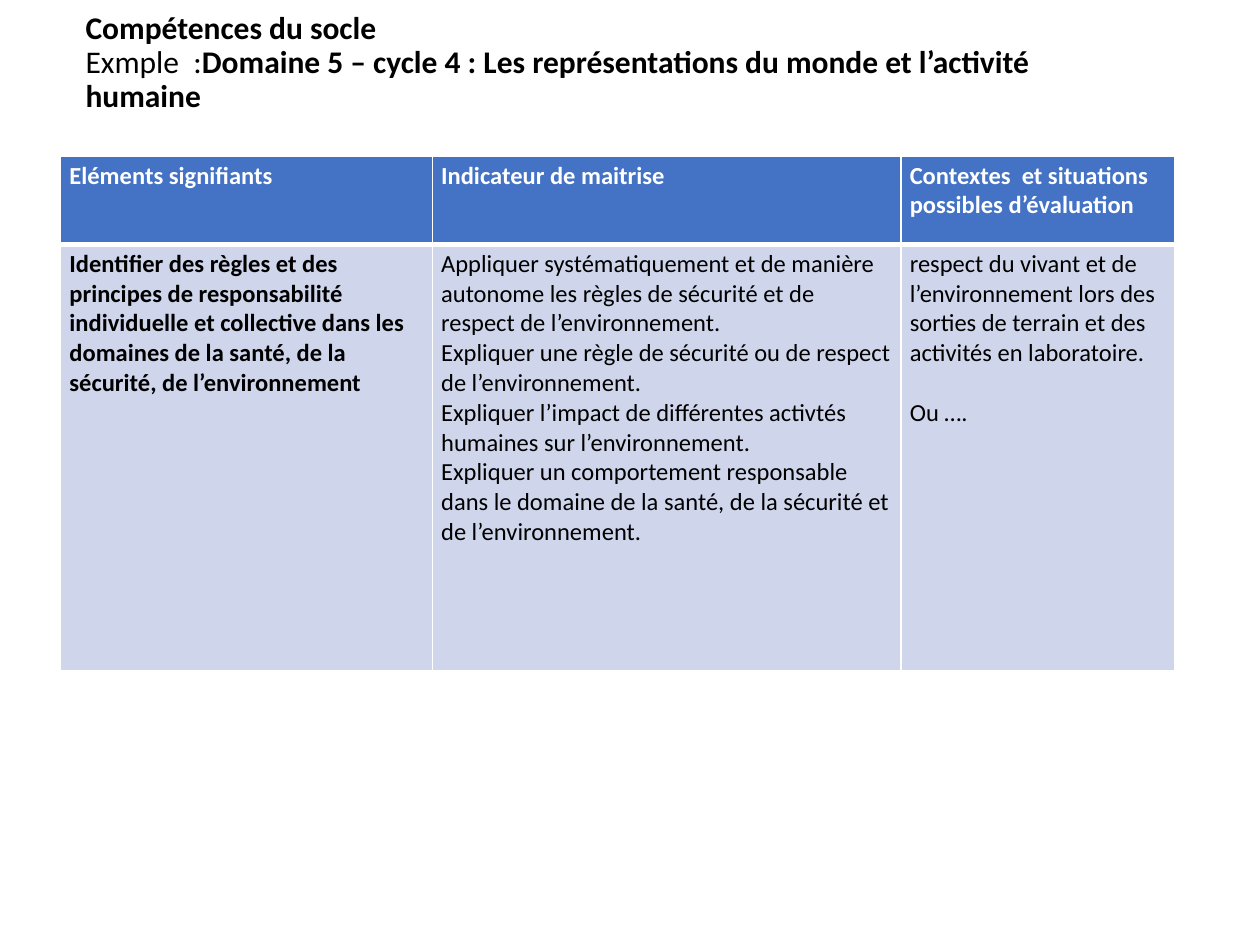
from lxml.etree import SubElement
from pptx import Presentation
from pptx.dml.color import RGBColor
from pptx.enum.text import MSO_ANCHOR
from pptx.oxml.ns import qn
from pptx.util import Pt

COLORS = {"ink": "000000", "white": "FFFFFF", "header": "4472C4", "body": "CFD5EA"}

TITLE_SPANS = [
    ("Compétences du socle\v", True),
    ("Exmple  :", False),
    ("Domaine 5 – cycle 4 : Les représentations du monde et l’activité humaine", True),
]
HEADINGS = [
    "Eléments signifiants",
    "Indicateur de maitrise",
    "Contextes  et situations possibles d’évaluation",
]
ELEMENTS = [
    "Identifier des règles et des principes de responsabilité individuelle et "
    "collective dans les domaines de la santé, de la sécurité, de l’environnement",
]
INDICATORS = [
    "Appliquer systématiquement et de manière autonome les règles de sécurité "
    "et de respect de l’environnement.",
    "Expliquer une règle de sécurité ou de respect de l’environnement.",
    "Expliquer l’impact de différentes activtés humaines sur l’environnement.",
    "Expliquer un comportement responsable dans le domaine de la santé, "
    "de la sécurité et de l’environnement.",
]
CONTEXTS = [
    "respect du vivant et de l’environnement lors des sorties de terrain "
    "et des activités en laboratoire.",
    "Ou ….",
]

HEADER_STYLE = {"size": Pt(14), "bold": True, "color": "white"}
STRONG_STYLE = {"size": Pt(14), "bold": True, "color": "ink"}
PLAIN_STYLE = {"size": Pt(14), "bold": False, "color": "ink"}
CELL_FORMAT = {
    "margin_left": Pt(5.1), "margin_right": Pt(5.1),
    "margin_top": Pt(2.6), "margin_bottom": Pt(2.6),
    "vertical_anchor": MSO_ANCHOR.TOP,
}
COLUMN_WIDTHS = [212.4, 267.8, 156.3]
ROW_HEIGHTS = [50.4, 243.4]


def set_format(target, values):
    for name, value in values.items():
        setattr(target, name, value)


def add_span(para, text, style):
    """Add text to a paragraph; a vertical tab becomes a line break."""
    span = para.add_run()
    span.text = text.rstrip("\v")
    if text.endswith("\v"):
        para.add_line_break()
    set_format(span.font, {"name": "Calibri", "size": style["size"], "bold": style["bold"]})
    span.font.color.rgb = RGBColor.from_string(COLORS[style["color"]])


def set_borders(cell, widths):
    properties = cell._tc.get_or_add_tcPr()
    for position, (side, width) in enumerate(widths.items()):
        line = properties.makeelement(qn(f"a:{side}"), {"w": str(Pt(width))})
        fill = SubElement(line, qn("a:solidFill"))
        SubElement(fill, qn("a:srgbClr"), val=COLORS["white"])
        properties.insert(position, line)


def add_title(page, left, top, width, height):
    box = page.shapes.add_textbox(Pt(left), Pt(top), Pt(width), Pt(height))
    # The deeper bottom margin lifts the centred lines above the table
    set_format(box.text_frame, {
        "word_wrap": True, "vertical_anchor": MSO_ANCHOR.MIDDLE,
        "margin_top": Pt(3.6), "margin_bottom": Pt(23),
    })
    para = box.text_frame.paragraphs[0]
    para.line_spacing = 0.9
    for text, bold in TITLE_SPANS:
        add_span(para, text, {"size": Pt(18), "bold": bold, "color": "ink"})


def fill_cell(cell, texts, style, fill, borders, gap=0):
    set_format(cell, CELL_FORMAT)
    cell.fill.solid()
    cell.fill.fore_color.rgb = RGBColor.from_string(COLORS[fill])
    set_borders(cell, borders)
    for index, text in enumerate(texts):
        para = cell.text_frame.add_paragraph() if index else cell.text_frame.paragraphs[0]
        if index and gap:
            para.space_before = Pt(gap)
        add_span(para, text, style)


def add_skills_table(page, left, top):
    table = page.shapes.add_table(
        len(ROW_HEIGHTS), len(COLUMN_WIDTHS), Pt(left), Pt(top),
        Pt(sum(COLUMN_WIDTHS)), Pt(sum(ROW_HEIGHTS))).table
    for column, width in zip(table.columns, COLUMN_WIDTHS):
        column.width = Pt(width)
    for row, height in zip(table.rows, ROW_HEIGHTS):
        row.height = Pt(height)

    # Header row, with a thick rule beneath
    for index, heading in enumerate(HEADINGS):
        fill_cell(table.cell(0, index), [heading], HEADER_STYLE, "header",
                  {"lnL": 1, "lnR": 1, "lnT": 1, "lnB": 3})

    # Body row: one list of paragraphs per column
    body = [(ELEMENTS, STRONG_STYLE, 0), (INDICATORS, PLAIN_STYLE, 0),
            (CONTEXTS, PLAIN_STYLE, 17)]
    for index, (texts, style, gap) in enumerate(body):
        fill_cell(table.cell(1, index), texts, style, "body",
                  {"lnL": 1, "lnR": 1, "lnT": 3, "lnB": 1}, gap)


def main():
    deck = Presentation()
    set_format(deck, {"slide_width": Pt(720), "slide_height": Pt(540)})
    page = deck.slides.add_slide(deck.slide_layouts[6])
    add_title(page, 41.8, 24.5, 620.6, 43.2)
    add_skills_table(page, 34.6, 89.3)
    deck.save("out.pptx")


if __name__ == "__main__":
    main()
